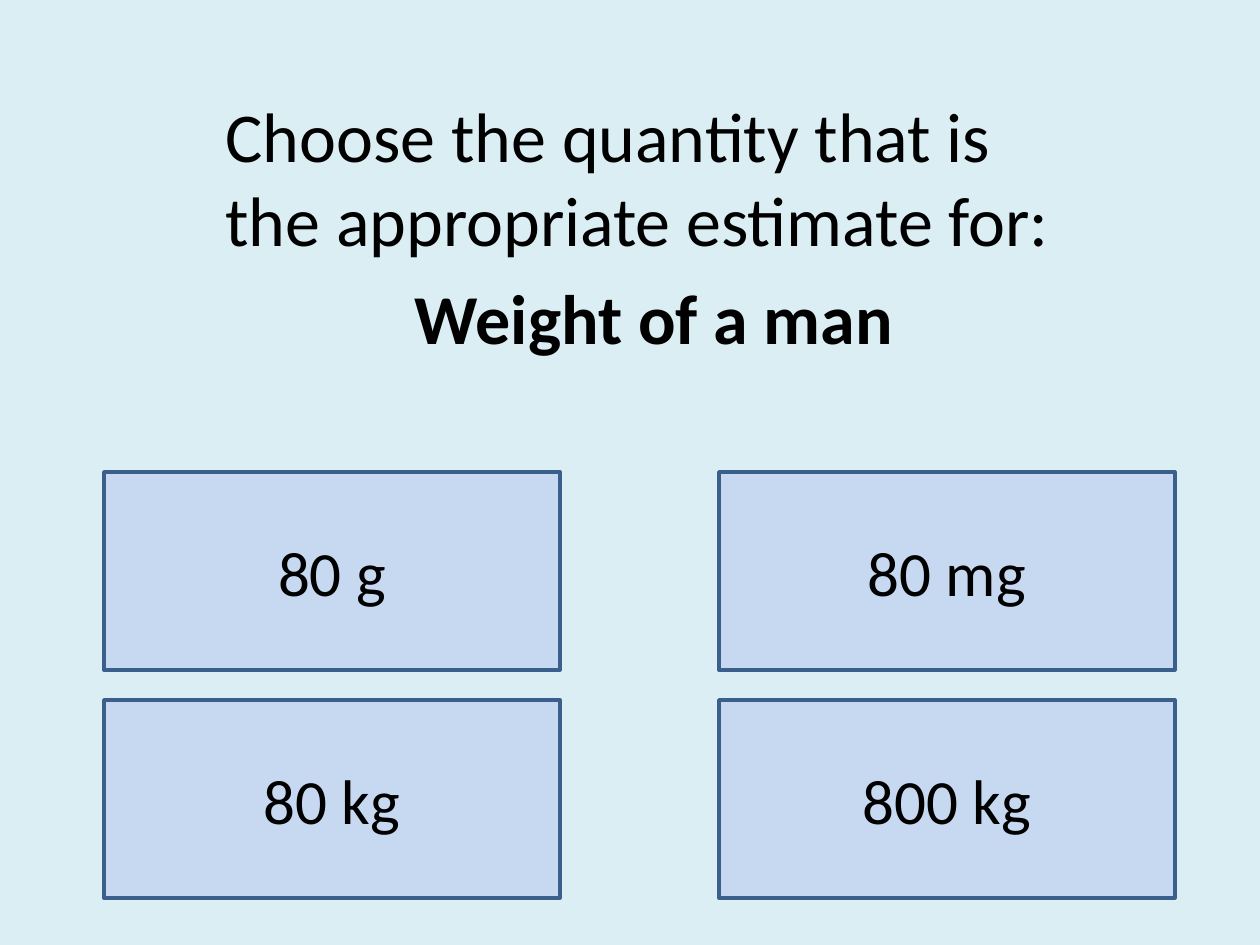
from dataclasses import dataclass

from lxml.etree import SubElement
from pptx import Presentation
from pptx.dml.color import RGBColor
from pptx.enum.shapes import MSO_SHAPE as Preset
from pptx.enum.text import MSO_ANCHOR as Anchor, MSO_AUTO_SIZE as AutoSize, PP_ALIGN as Align
from pptx.oxml.ns import qn
from pptx.slide import Slide
from pptx.text.text import _Paragraph as Paragraph
from pptx.util import Emu, Pt

PX_PER_INCH = 126


@dataclass(frozen=True)
class Theme:
    background: RGBColor = RGBColor(0xDB, 0xEE, 0xF4)
    card: RGBColor = RGBColor(0xC6, 0xD9, 0xF1)
    border: RGBColor = RGBColor(0x3A, 0x5F, 0x8C)
    text: RGBColor = RGBColor(0, 0, 0)
    font: str = "Calibri"
    question_size: int = 40
    answer_size: int = 36


@dataclass(frozen=True)
class Answer:
    text: str
    column: int
    row: int


THEME = Theme()
ANSWERS = [
    Answer("80 kg", 0, 1),
    Answer("80 g", 0, 0),
    Answer("800 kg", 1, 1),
    Answer("80 mg", 1, 0),
]
GRID_LEFT, GRID_TOP = 104, 472
CARD_WIDTH, CARD_HEIGHT = 456, 198
COLUMN_GAP, ROW_GAP = 159, 30


def px(length: int) -> Emu:
    return Emu(round(length * 914400 / PX_PER_INCH))


def write(paragraph: Paragraph, text: str, *, size: int,
          align: Align = Align.LEFT, bold: bool = False) -> None:
    paragraph.alignment = align
    run = paragraph.add_run()
    run.text = text
    run.font.name = THEME.font
    run.font.size = Pt(size)
    run.font.bold = bold
    run.font.color.rgb = THEME.text


def remove_bullet(paragraph: Paragraph) -> None:
    properties = paragraph._p.get_or_add_pPr()
    properties.set("marL", "0")
    properties.set("indent", "0")
    SubElement(properties, qn("a:buNone"))


def draw_answer(slide: Slide, answer: Answer) -> None:
    shape = slide.shapes.add_shape(
        Preset.RECTANGLE,
        px(GRID_LEFT + answer.column * (CARD_WIDTH + COLUMN_GAP)),
        px(GRID_TOP + answer.row * (CARD_HEIGHT + ROW_GAP)),
        px(CARD_WIDTH), px(CARD_HEIGHT))
    shape.shadow.inherit = False
    shape.fill.solid()
    shape.fill.fore_color.rgb = THEME.card
    shape.line.color.rgb = THEME.border
    shape.line.width = Pt(2)
    shape.text_frame.vertical_anchor = Anchor.MIDDLE
    write(shape.text_frame.paragraphs[0], answer.text,
          size=THEME.answer_size, align=Align.CENTER)


def draw_question(slide: Slide) -> None:
    body = slide.placeholders[1]
    body.left, body.top, body.width, body.height = map(px, (213, 86, 882, 309))
    frame = body.text_frame
    frame.word_wrap = True
    frame.auto_size = AutoSize.NONE
    prompt, subject = frame.paragraphs[0], frame.add_paragraph()
    write(prompt, "Choose the quantity that is the appropriate estimate for:",
          size=THEME.question_size)
    write(subject, "Weight of a man", size=THEME.question_size,
          align=Align.CENTER, bold=True)
    for paragraph in (prompt, subject):
        remove_bullet(paragraph)


def main() -> None:
    presentation = Presentation()
    presentation.slide_width, presentation.slide_height = px(1260), px(945)
    slide = presentation.slides.add_slide(presentation.slide_layouts[1])
    slide.background.fill.solid()
    slide.background.fill.fore_color.rgb = THEME.background
    title = slide.shapes.title.element
    title.getparent().remove(title)
    for answer in ANSWERS:
        draw_answer(slide, answer)
    draw_question(slide)
    presentation.save("out.pptx")


if __name__ == "__main__":
    main()
